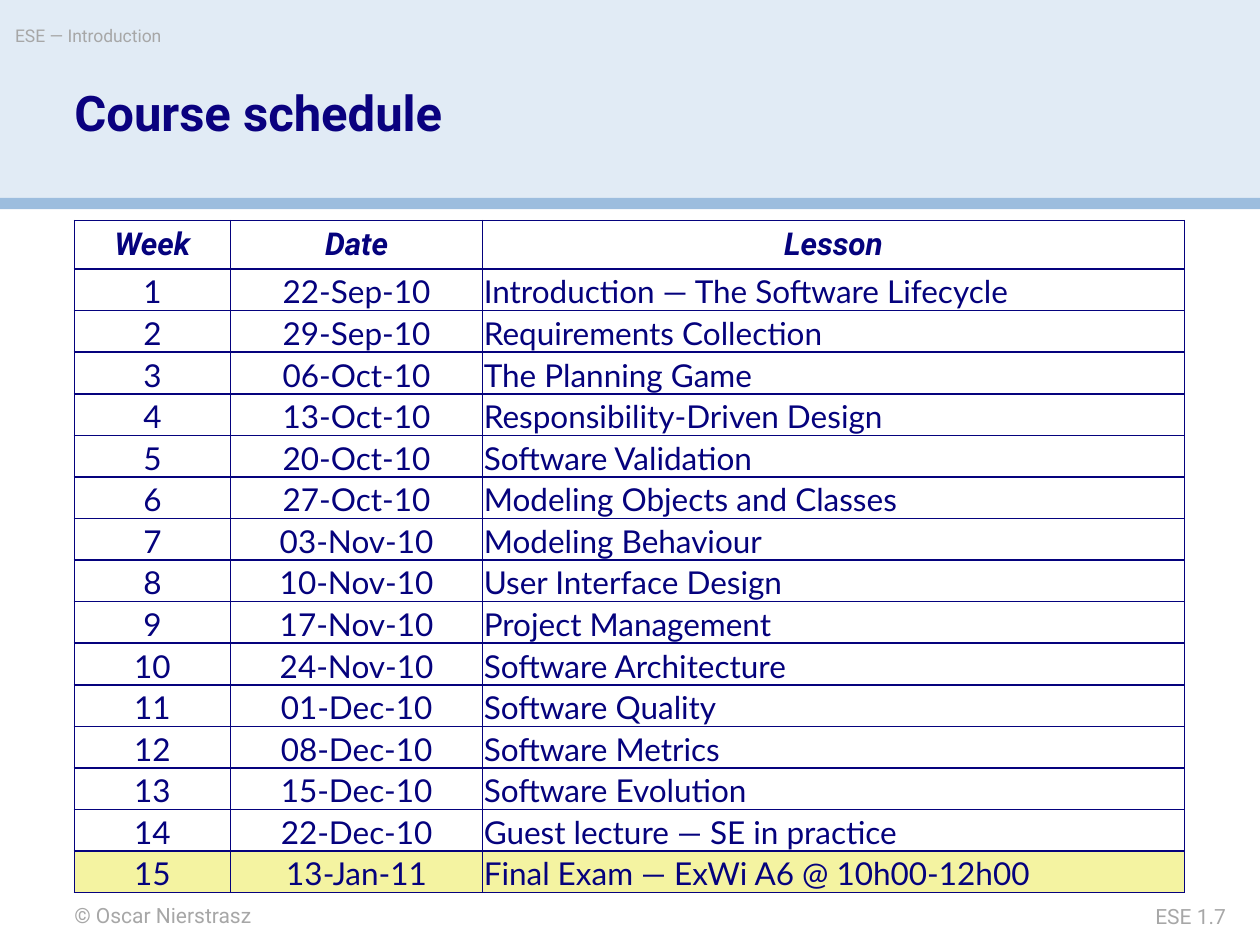
"""Build the course schedule slide."""
from lxml import etree
from pptx import Presentation
from pptx.dml.color import RGBColor
from pptx.enum.shapes import MSO_SHAPE
from pptx.enum.text import MSO_ANCHOR, PP_ALIGN
from pptx.oxml import parse_xml
from pptx.oxml.ns import nsdecls
from pptx.util import Inches, Pt

RECT = MSO_SHAPE.RECTANGLE
LEFT, MID, RIGHT = PP_ALIGN.LEFT, PP_ALIGN.CENTER, PP_ALIGN.RIGHT
TOP, CENTER, BOTTOM = MSO_ANCHOR.TOP, MSO_ANCHOR.MIDDLE, MSO_ANCHOR.BOTTOM
COLORS = {
    "head": "E1EBF5",
    "stripe": "9CBDDE",
    "note": "A7A7A7",
    "title": "0A017F",
    "ink": "05027D",
    "exam": "F4F3A1",
}
ROWS = [
    ("Week", "Date", "Lesson"),
    ("1", "22-Sep-10", "Introduction — The Software Lifecycle"),
    ("2", "29-Sep-10", "Requirements Collection"),
    ("3", "06-Oct-10", "The Planning Game"),
    ("4", "13-Oct-10", "Responsibility-Driven Design"),
    ("5", "20-Oct-10", "Software Validation"),
    ("6", "27-Oct-10", "Modeling Objects and Classes"),
    ("7", "03-Nov-10", "Modeling Behaviour"),
    ("8", "10-Nov-10", "User Interface Design"),
    ("9", "17-Nov-10", "Project Management"),
    ("10", "24-Nov-10", "Software Architecture"),
    ("11", "01-Dec-10", "Software Quality"),
    ("12", "08-Dec-10", "Software Metrics"),
    ("13", "15-Dec-10", "Software Evolution"),
    ("14", "22-Dec-10", "Guest lecture — SE in practice"),
    ("15", "13-Jan-11", "Final Exam — ExWi A6 @ 10h00-12h00"),
]


def style(para, face, size, color, align=LEFT, bold=False, italic=False):
    para.alignment = align
    font = para.font
    font.name, font.size, font.bold, font.italic = face, Pt(size), bold, italic
    font.color.rgb = RGBColor.from_string(COLORS[color])


def place(shape, text, left, top, width, height):
    shape.left, shape.top = Inches(left), Inches(top)
    shape.width, shape.height = Inches(width), Inches(height)
    frame = shape.text_frame
    frame.margin_left = frame.margin_right = 0
    frame.margin_top = frame.margin_bottom = 0
    frame.vertical_anchor = TOP
    frame.word_wrap = True
    frame.text = text
    return frame.paragraphs[0]


prs = Presentation()
prs.slide_width, prs.slide_height = Inches(10), Inches(7.5)
slide = prs.slides.add_slide(prs.slide_layouts[5])
shapes = slide.shapes
title = shapes.title

for color, top, height in [("head", 0, 1.58), ("stripe", 1.57, 0.09)]:
    band = shapes.add_shape(RECT, 0, Inches(top), Inches(10), Inches(height))
    band.shadow.inherit = False
    band.fill.solid()
    band.fill.fore_color.rgb = RGBColor.from_string(COLORS[color])
    band.line.fill.background()
    title.element.addprevious(band.element)

para = place(title, "Course schedule", 0.59, 0.71, 7.24, 0.89)
style(para, "Roboto", 28, "title", bold=True)
para.line_spacing = 0.9

for text, box, size, align in [
    ("© Oscar Nierstrasz", (0.59, 7.16, 4.17, 0.2), 12, LEFT),
    ("ESE — Introduction", (0.12, 0.2, 5.9, 0.28), 10, LEFT),
    ("ESE 1.7", (8.25, 7.17, 1.48, 0.2), 12, RIGHT),
]:
    para = place(shapes.add_textbox(0, 0, 0, 0), text, *box)
    style(para, "Roboto", size, "note", align)

pitch = 0.33
table = shapes.add_table(
    len(ROWS), 3, Inches(0.59), Inches(1.75), Inches(8.81), Inches(pitch * len(ROWS))
).table
table.first_row = table.horz_banding = False
for column, width in zip(table.columns, (1.24, 2, 5.57)):
    column.width = Inches(width)

for r, row in enumerate(ROWS):
    table.rows[r].height = Inches(pitch)
    for c, text in enumerate(row):
        cell = table.cell(r, c)
        cell.text = text
        para = cell.text_frame.paragraphs[0]
        if r == 0:
            cell.vertical_anchor = CENTER
            style(para, "Roboto", 18, "ink", MID, True, True)
            para.line_spacing = 0.95
        else:
            cell.vertical_anchor = BOTTOM
            cell.margin_left = cell.margin_right = cell.margin_top = Inches(0.01)
            cell.margin_bottom = 0
            style(para, "Lato", 18, "ink", LEFT if c == 2 else MID)
        props = cell._tc.get_or_add_tcPr()
        for side in "LRTB":
            edge = parse_xml(f'<a:ln{side} {nsdecls("a")} w="{Pt(1)}"/>')
            fill = etree.SubElement(edge, edge.tag.replace(f"ln{side}", "solidFill"))
            etree.SubElement(fill, fill.tag.replace("solidFill", "srgbClr"), val=COLORS["ink"])
            props.append(edge)
        if r == len(ROWS) - 1:
            cell.fill.solid()
            cell.fill.fore_color.rgb = RGBColor.from_string(COLORS["exam"])
        else:
            cell.fill.background()

prs.save("out.pptx")
